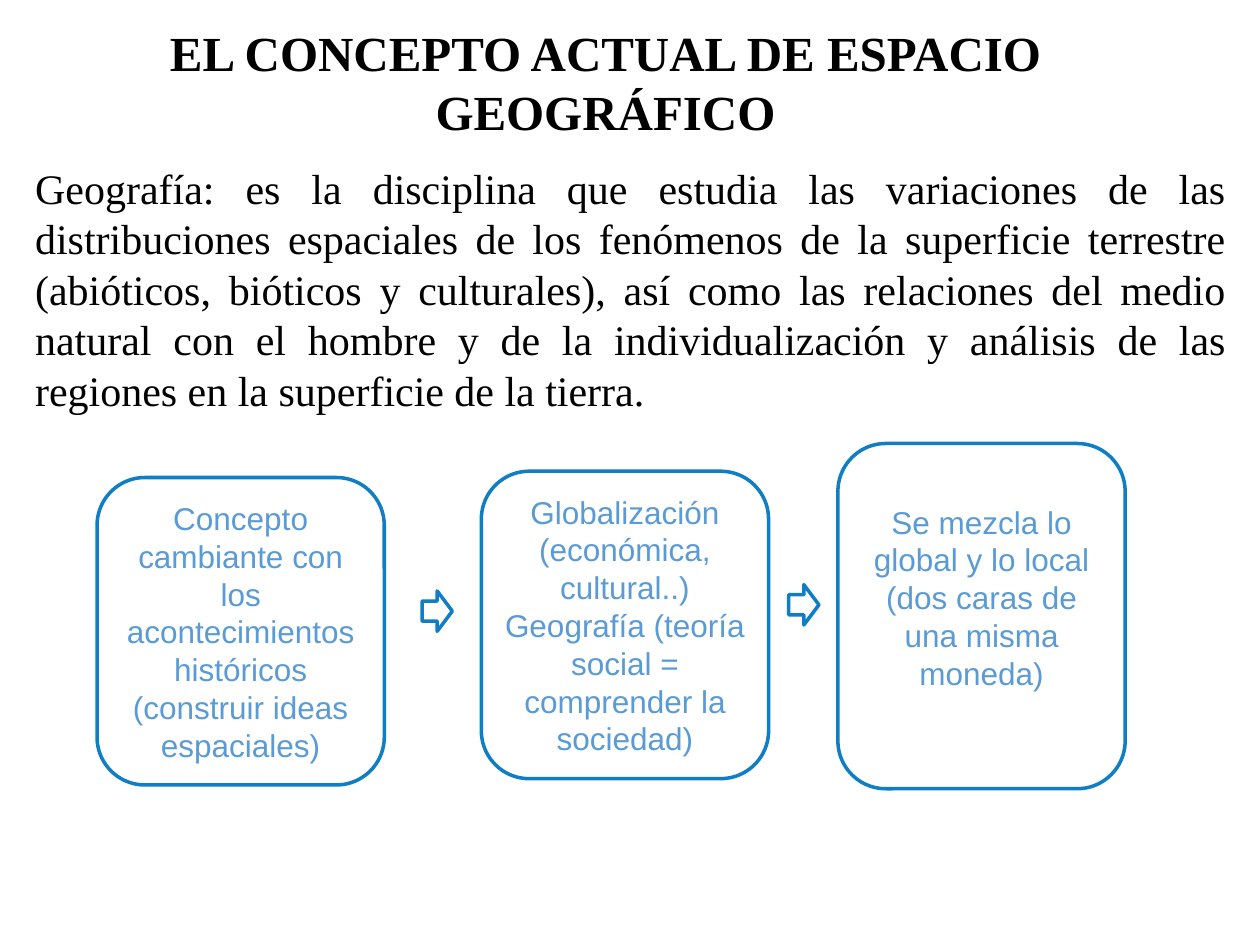
"""Build the slide on the current concept of geographic space."""
import pptx
import pptx.dml.color
import pptx.enum.shapes
import pptx.enum.text
import pptx.util

Inches = pptx.util.Inches
Align = pptx.enum.text.PP_ALIGN
Shape = pptx.enum.shapes.MSO_SHAPE

THEME = {
    "white": pptx.dml.color.RGBColor.from_string("FFFFFF"),
    "outline": pptx.dml.color.RGBColor.from_string("0F7EC5"),
    "title": {"name": "Times New Roman", "size": pptx.util.Pt(28), "bold": True, "color": "000000"},
    "body": {"name": "Times New Roman", "size": pptx.util.Pt(24), "bold": False, "color": "000000"},
    "card": {"name": "Arial", "size": pptx.util.Pt(18), "bold": False, "color": "5B9BD5"},
}


def write(box, lines, style, align, anchor, margins):
    frame = box.text_frame
    settings = {"word_wrap": True, "vertical_anchor": anchor, **margins}
    for name, value in settings.items():
        setattr(frame, name, value)
    for index, line in enumerate(lines):
        para = frame.add_paragraph() if index else frame.paragraphs[0]
        para.alignment = align
        span = para.add_run()
        span.text = line
        for name in ("name", "size", "bold"):
            setattr(span.font, name, THEME[style][name])
        span.font.color.rgb = pptx.dml.color.RGBColor.from_string(THEME[style]["color"])


def outlined(page, kind, left, top, width, height):
    shape = page.shapes.add_shape(kind, Inches(left), Inches(top), Inches(width), Inches(height))
    shape.shadow.inherit = False
    shape.fill.solid()
    shape.fill.fore_color.rgb = THEME["white"]
    shape.line.color.rgb = THEME["outline"]
    shape.line.width = pptx.util.Pt(2)
    return shape


deck = pptx.Presentation()
deck.slide_width, deck.slide_height = Inches(10), Inches(7.5)
page = deck.slides.add_slide(deck.slide_layouts[6])

texts = [
    ("title", Align.CENTER, (0.2, 0.13, 9.21, 1.04), "EL CONCEPTO ACTUAL DE ESPACIO GEOGRÁFICO"),
    ("body", Align.JUSTIFY, (0.18, 1.24, 9.65, 2.12),
     "Geografía: es la disciplina que estudia las variaciones de las distribuciones espaciales "
     "de los fenómenos de la superficie terrestre (abióticos, bióticos y culturales), así como "
     "las relaciones del medio natural con el hombre y de la individualización y análisis de "
     "las regiones en la superficie de la tierra."),
]
for style, align, place, text in texts:
    box = page.shapes.add_textbox(*map(Inches, place))
    write(box, [text], style, align, pptx.enum.text.MSO_ANCHOR.TOP, {})

cards = [
    (0.77, 3.79, 2.44, 0.05,
     ["Concepto cambiante con los acontecimientos históricos (construir ideas espaciales)"]),
    (3.82, 3.74, 2.44, 0.05,
     ["Globalización (económica, cultural..)", "Geografía (teoría social = comprender la sociedad)"]),
    (6.65, 3.52, 2.74, 0.35,
     ["Se mezcla lo global y lo local (dos caras de una misma moneda)"]),
]
for left, top, height, bottom_margin, lines in cards:
    card = outlined(page, Shape.ROUNDED_RECTANGLE, left, top, 2.28, height)
    margins = dict.fromkeys(("margin_left", "margin_right", "margin_top"), Inches(0.05))
    margins["margin_bottom"] = Inches(bottom_margin)
    write(card, lines, "card", Align.CENTER, pptx.enum.text.MSO_ANCHOR.MIDDLE, margins)

for left, top in ((3.35, 4.69), (6.26, 4.64)):
    outlined(page, Shape.RIGHT_ARROW, left, top, 0.24, 0.32)

deck.save("out.pptx")
